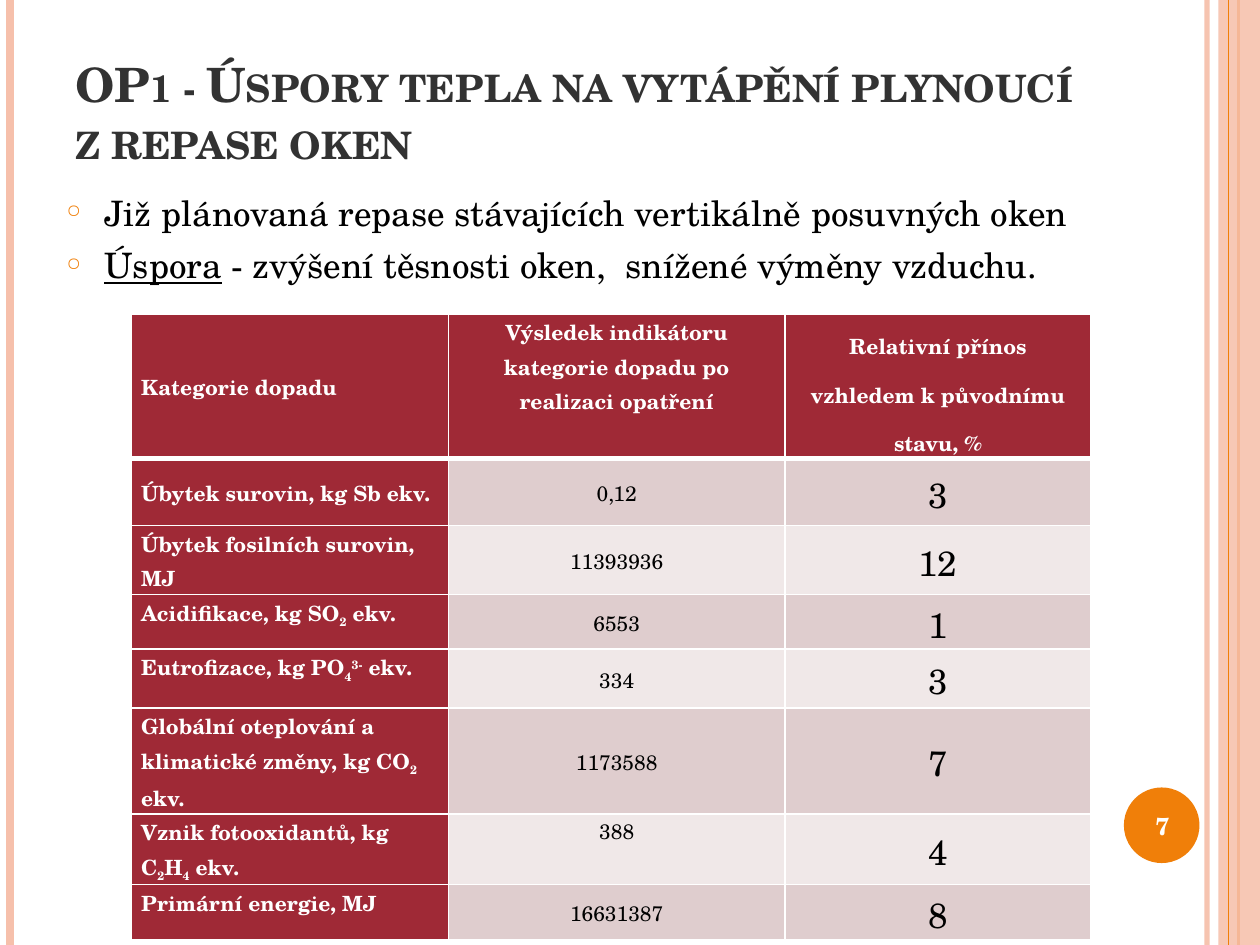
from pptx import Presentation
from pptx.dml.color import RGBColor
from pptx.enum.shapes import MSO_CONNECTOR, MSO_SHAPE
from pptx.enum.text import MSO_ANCHOR as ANCHOR, PP_ALIGN as ALIGN
from pptx.oxml import parse_xml
from pptx.oxml.ns import nsdecls, qn
from pptx.util import Inches, Pt
from lxml.etree import SubElement

FONT = "TeX Gyre Schola"
WHITE, BLACK, ORANGE, PEACH = "FFFFFF", "000000", "F07F09", "F6C0AB"
RED, BANDS = "9F2936", ("DFCDCE", "F0E8E8")
TITLE = "OP1 - Úspory tepla na vytápění plynoucí z repase oken"
BULLETS = [
    [("Již plánovaná repase stávajících vertikálně posuvných oken", False)],
    [("Úspora", True), (" - zvýšení těsnosti oken,  snížené výměny vzduchu.", False)],
]
HEADERS = [
    "Kategorie dopadu",
    "Výsledek indikátoru kategorie dopadu po realizaci opatření",
    "Relativní přínos vzhledem k původnímu stavu, %",
]
IMPACTS = [
    ("Úbytek surovin, kg Sb ekv.", "0,12", "3"),
    ("Úbytek fosilních surovin, MJ", "11393936", "12"),
    ("Acidifikace, kg SO|_2| ekv.", "6553", "1"),
    ("Eutrofizace, kg PO|_4|^3-| ekv.", "334", "3"),
    ("Globální oteplování a klimatické změny, kg CO|_2| ekv.", "1173588", "7"),
    ("Vznik fotooxidantů, kg C|_2|H|_4| ekv.", "388", "4"),
    ("Primární energie, MJ", "16631387", "8"),
]
COL_WIDTHS = [2.52, 2.67, 2.43]
ROW_HEIGHTS = [1.15, 0.53, 0.55, 0.43, 0.47, 0.84, 0.56, 0.44]
BASELINES = {"_": "-25000", "^": "30000"}


def rgb(value):
    """Turn a hex string into a colour."""
    return RGBColor.from_string(value)


def set_alpha(sp, percent):
    """Make the first colour of a shape or line partly transparent."""
    color = next(sp._element.spPr.iter(qn("a:srgbClr")))
    SubElement(color, qn("a:alpha")).set("val", str(percent * 1000))


def add_rule(slide, x, color, width, alpha=100):
    """Draw a full-height vertical line."""
    line = slide.shapes.add_connector(
        MSO_CONNECTOR.STRAIGHT, Inches(x), 0, Inches(x), Inches(7.5))
    line.line.color.rgb = rgb(color)
    line.line.width = Pt(width)
    SubElement(line._element.spPr, qn("a:effectLst"))
    if alpha < 100:
        set_alpha(line, alpha)


def add_block(slide, kind, box, color):
    """Draw a filled shape without outline."""
    sp = slide.shapes.add_shape(kind, *map(Inches, box))
    sp.shadow.inherit = False
    sp.fill.solid()
    sp.fill.fore_color.rgb = rgb(color)
    sp.line.fill.background()
    return sp


def add_text_frame(slide, box, anchor):
    """Add a wrapping text box and return its frame."""
    tf = slide.shapes.add_textbox(*map(Inches, box)).text_frame
    tf.word_wrap = True
    tf.vertical_anchor = anchor
    return tf


def add_run(p, text, size, color, bold=False):
    """Append a formatted run."""
    r = p.add_run()
    r.text = text
    r.font.name = FONT
    r.font.size = Pt(size)
    r.font.bold = bold
    r.font.color.rgb = rgb(color)
    return r


def add_bullets(slide, box):
    """Write the bulleted statements."""
    tf = add_text_frame(slide, box, ANCHOR.TOP)
    for i, pieces in enumerate(BULLETS):
        p = tf.add_paragraph() if i else tf.paragraphs[0]
        p.space_before = Pt(6)
        pPr = p._p.get_or_add_pPr()
        pPr.set("marL", str(Inches(0.3)))
        pPr.set("indent", str(-Inches(0.3)))
        color = SubElement(pPr, qn("a:buClr"))
        SubElement(color, qn("a:srgbClr")).set("val", ORANGE)
        SubElement(pPr, qn("a:buSzPct")).set("val", "52000")
        SubElement(pPr, qn("a:buChar")).set("char", "○")
        for text, underlined in pieces:
            add_run(p, text, 20, BLACK).font.underline = underlined


def set_borders(cell, top, bottom):
    """Give a cell white borders."""
    tcPr = cell._tc.get_or_add_tcPr()
    for i, (side, width) in enumerate(zip("LRTB", (1, 1, top, bottom))):
        tcPr.insert(i, parse_xml(
            f'<a:ln{side} {nsdecls("a")} w="{Pt(width)}"><a:solidFill>'
            f'<a:srgbClr val="{WHITE}"/></a:solidFill></a:ln{side}>'))


def fill_cell(cell, text, size, color, fill, bold, align, anchor, spacing=1.07):
    """Write and format a cell; | splits off _subscripts and ^superscripts."""
    cell.fill.solid()
    cell.fill.fore_color.rgb = rgb(fill)
    cell.margin_left = cell.margin_right = Inches(0.08)
    cell.margin_top = cell.margin_bottom = 0
    cell.vertical_anchor = anchor
    p = cell.text_frame.paragraphs[0]
    p.alignment = align
    p.line_spacing = spacing
    for piece in text.split("|"):
        baseline = BASELINES.get(piece[0])
        r = add_run(p, piece[1:] if baseline else piece, size, color, bold)
        if baseline:
            r.font._element.set("baseline", baseline)


def add_impact_table(slide):
    """Build the table of impact categories."""
    table = slide.shapes.add_table(
        len(ROW_HEIGHTS), len(COL_WIDTHS), Inches(1.04), Inches(2.49),
        Inches(sum(COL_WIDTHS)), Inches(sum(ROW_HEIGHTS))).table
    for col, width in zip(table.columns, COL_WIDTHS):
        col.width = Inches(width)
    for row, height in zip(table.rows, ROW_HEIGHTS):
        row.height = Inches(height)
    for i, values in enumerate([HEADERS] + IMPACTS):
        for j, text in enumerate(values):
            cell = table.cell(i, j)
            strong = i == 0 or j == 0
            at_top = (i == 0 and j > 0) or (i > 1 and j == 0) or text == "388"
            fill_cell(
                cell, text,
                size=20 if i and j == 2 else 12,
                color=WHITE if strong else BLACK,
                fill=RED if strong else BANDS[(i - 1) % 2],
                bold=strong,
                align=ALIGN.CENTER if j else ALIGN.LEFT,
                anchor=ANCHOR.TOP if at_top else ANCHOR.MIDDLE,
                spacing=1.5 if (i, j) == (0, 2) else 1.07)
            set_borders(cell, 3 if i == 1 else 1, 3 if i == 0 else 1)


def add_frame(slide):
    """Draw the side stripes and the page number disc."""
    add_rule(slide, 9.58, PEACH, 3, 93)
    add_rule(slide, 0.08, PEACH, 4.5)
    add_rule(slide, 9.83, ORANGE, 1.5)
    set_alpha(add_block(slide, MSO_SHAPE.RECTANGLE, (9.67, 0, 0.33, 7.5), PEACH), 87)
    add_rule(slide, 9.75, ORANGE, 0.75)
    add_block(slide, MSO_SHAPE.OVAL, (8.92, 6.25, 0.6, 0.6), ORANGE)


def main():
    """Build and save the slide."""
    prs = Presentation()
    prs.slide_width, prs.slide_height = Inches(10), Inches(7.5)
    slide = prs.slides.add_slide(prs.slide_layouts[6])
    add_frame(slide)
    title = add_text_frame(slide, (0.5, 0.3, 8.17, 1.09), ANCHOR.BOTTOM).paragraphs[0]
    add_run(title, TITLE, 27, "323232", True).font._element.set("cap", "small")
    add_bullets(slide, (0.43, 1.47, 8.23, 0.95))
    number = add_text_frame(slide, (8.89, 6.27, 0.67, 0.57), ANCHOR.MIDDLE).paragraphs[0]
    number.alignment = ALIGN.CENTER
    add_run(number, "7", 14, WHITE, True)
    add_impact_table(slide)
    prs.save("out.pptx")


if __name__ == "__main__":
    main()
